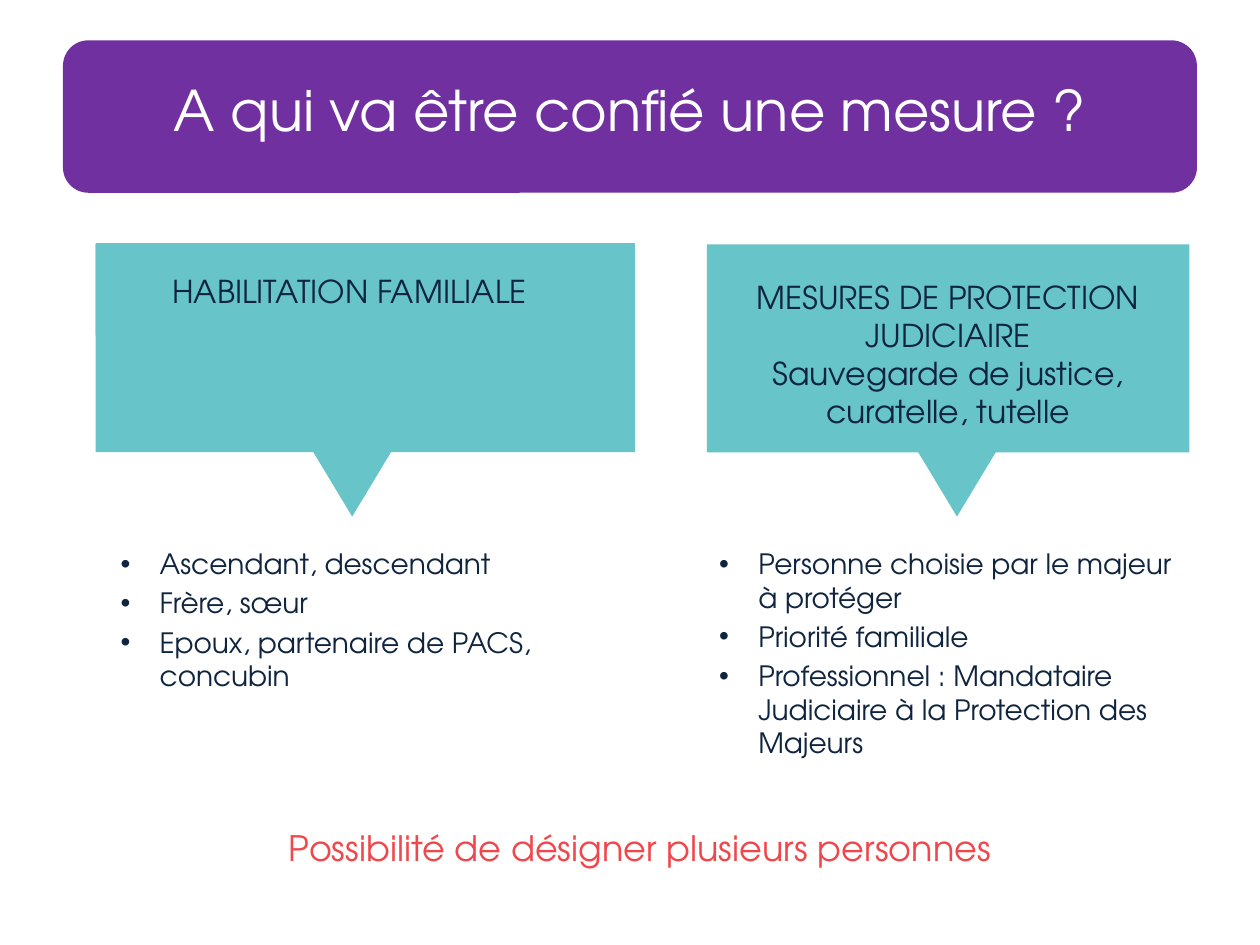
from lxml.etree import SubElement
from pptx import Presentation
from pptx.dml.color import RGBColor
from pptx.enum.shapes import MSO_SHAPE as Shape
from pptx.enum.text import MSO_ANCHOR as Anchor, PP_ALIGN as Align
from pptx.oxml.ns import qn
from pptx.util import Inches, Pt

FONT = "TeX Gyre Adventor"
TEAL = "67C4C9"
PURPLE = "7030A0"
NAVY = "0F243E"
RED = "F0474C"
WHITE = "FFFFFF"


def color(value):
    return RGBColor.from_string(value)


def add_block(slide, kind, box, fill):
    shape = slide.shapes.add_shape(kind, *map(Inches, box))
    shape.shadow.inherit = False
    shape.fill.solid()
    shape.fill.fore_color.rgb = color(fill)
    shape.line.fill.background()
    return shape


def add_down_arrow(slide, left):
    arrow = add_block(slide, Shape.DOWN_ARROW, (left, 2.85, 0.75, 1.25), TEAL)
    arrow.adjustments[0] = 0.6
    arrow.adjustments[1] = 0.83


def write_text(shape, lines, size, font_color, align=Align.CENTER, space_before=0):
    frame = shape.text_frame
    frame.word_wrap = True
    frame.text = "\n".join(lines)
    for paragraph in frame.paragraphs:
        paragraph.alignment = align
        paragraph.space_before = Pt(space_before)
        for run in paragraph.runs:
            run.font.name = FONT
            run.font.size = Pt(size)
            run.font.color.rgb = color(font_color)


def add_text(slide, box, lines, size, font_color, **options):
    shape = slide.shapes.add_textbox(*map(Inches, box))
    write_text(shape, lines, size, font_color, **options)
    return shape


def add_bullets(slide, box, lines):
    shape = add_text(slide, box, lines, 16, NAVY, align=Align.LEFT, space_before=3.2)
    for paragraph in shape.text_frame.paragraphs:
        properties = paragraph._p.get_or_add_pPr()
        properties.set("marL", str(Inches(0.31)))
        properties.set("indent", str(Inches(-0.31)))
        SubElement(properties, qn("a:buFont"), typeface="Arial")
        SubElement(properties, qn("a:buChar"), char="•")


def main():
    presentation = Presentation()
    presentation.slide_width = Inches(10)
    presentation.slide_height = Inches(7.5)
    slide = presentation.slides.add_slide(presentation.slide_layouts[6])

    for left in (2.42, 7.22):
        add_down_arrow(slide, left)
    for box in ((0.76, 1.93, 4.28, 1.66), (5.61, 1.94, 3.83, 1.65), (0.76, 1.94, 4.24, 0.72)):
        add_block(slide, Shape.RECTANGLE, box, TEAL)

    add_block(slide, Shape.ROUNDED_RECTANGLE, (0.5, 0.32, 9, 1.21), PURPLE)
    add_text(slide, (0.5, 0.55, 9, 0.98), ["A qui va être confié une mesure ?"],
             32, WHITE, space_before=6.4)

    add_bullets(slide, (5.61, 4.29, 3.89, 1.87), [
        "Personne choisie par le majeur à protéger",
        "Priorité familiale",
        "Professionnel : Mandataire Judiciaire à la Protection des Majeurs",
    ])
    add_bullets(slide, (0.86, 4.29, 4.17, 1.87), [
        "Ascendant, descendant",
        "Frère, sœur",
        "Epoux, partenaire de PACS, concubin",
    ])

    add_text(slide, (5.61, 2.16, 3.83, 1.31), [
        "MESURES DE PROTECTION JUDICIAIRE",
        "Sauvegarde de justice, curatelle, tutelle",
    ], 18, NAVY)
    add_text(slide, (0.86, 2.11, 3.83, 0.4), ["HABILITATION FAMILIALE"], 18, NAVY)

    conclusion = add_block(slide, Shape.RECTANGLE, (1.22, 6.31, 7.72, 0.84), WHITE)
    conclusion.text_frame.vertical_anchor = Anchor.MIDDLE
    write_text(conclusion, ["Possibilité de désigner plusieurs personnes"], 20, RED)

    presentation.save("out.pptx")


if __name__ == "__main__":
    main()
